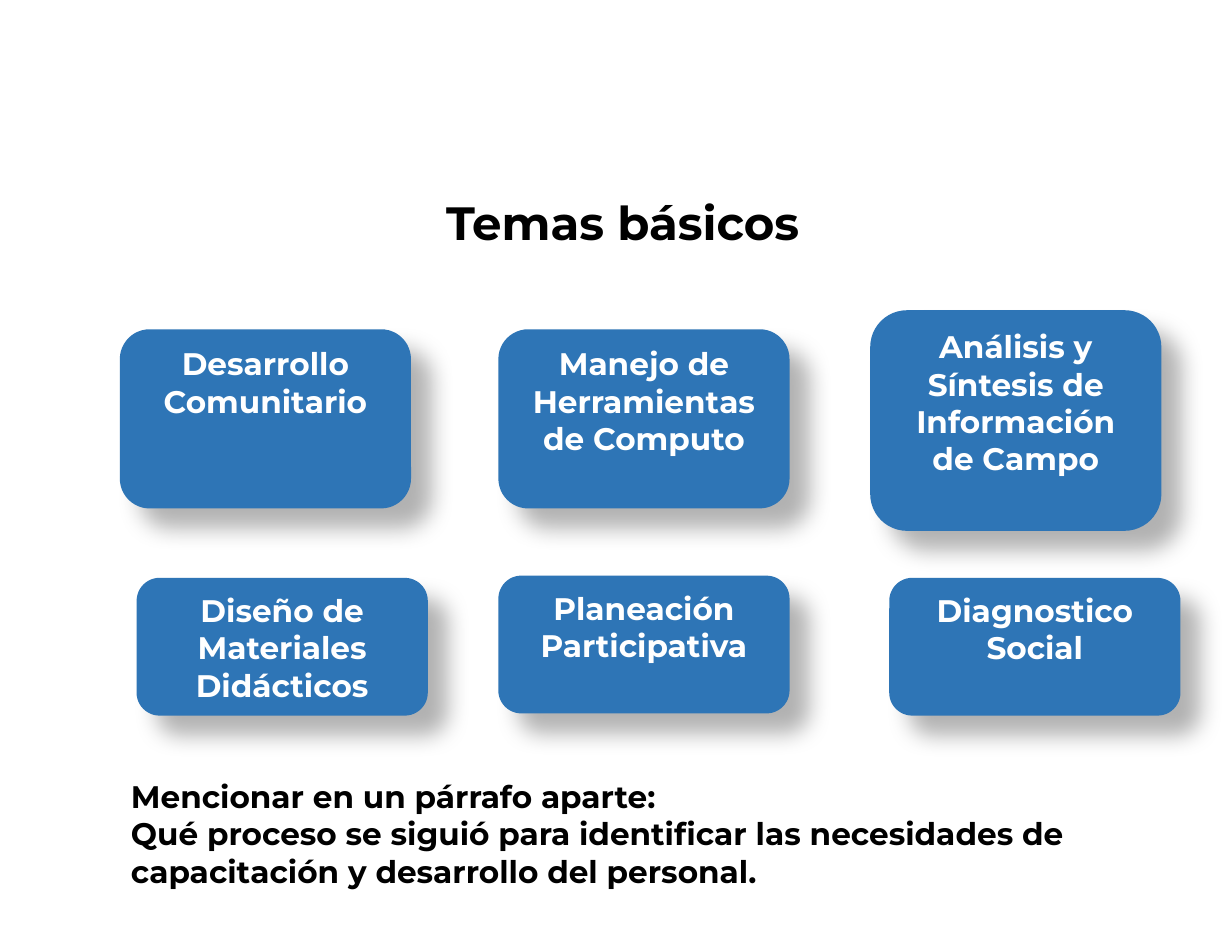
from lxml import etree
from pptx import Presentation
from pptx.dml.color import RGBColor
from pptx.enum.shapes import MSO_SHAPE
from pptx.enum.text import MSO_ANCHOR, PP_ALIGN
from pptx.oxml.ns import qn
from pptx.util import Inches, Pt

ROUNDED = MSO_SHAPE.ROUNDED_RECTANGLE
TOP = MSO_ANCHOR.TOP
LEFT, CENTER = PP_ALIGN.LEFT, PP_ALIGN.CENTER

COLORS = {"text": "000000", "card": "2E75B6", "card_text": "FFFFFF", "shadow": "000000"}
FONT = "Montserrat"
CARD_WIDTH = 2.6
TEXT_WIDTH = 9.62
TEXT_INSET = 0.57
CARD_INSET = 0.06

TITLE = ["Temas básicos"]
NOTE = [
    "Mencionar en un párrafo aparte:",
    "Qué proceso se siguió para identificar las necesidades de capacitación y desarrollo del personal.",
]
TOPICS = [
    ("Desarrollo Comunitario", 1.07, 2.94, 1.6),
    ("Manejo de Herramientas de Computo", 4.45, 2.94, 1.6),
    ("Análisis y Síntesis de Información de Campo", 7.77, 2.77, 1.97),
    ("Diseño de Materiales Didácticos", 1.22, 5.16, 1.23),
    ("Planeación Participativa", 4.45, 5.14, 1.23),
    ("Diagnostico Social", 7.94, 5.16, 1.23),
]


def write(shape, lines, size, color, align, inset):
    tf = shape.text_frame
    frame = {"word_wrap": True, "vertical_anchor": TOP, "margin_top": Inches(inset)}
    for name, value in frame.items():
        setattr(tf, name, value)
    for i, line in enumerate(lines):
        p = tf.paragraphs[0] if i == 0 else tf.add_paragraph()
        p.alignment = align
        r = p.add_run()
        r.text = line
        for name, value in {"name": FONT, "size": Pt(size), "bold": True}.items():
            setattr(r.font, name, value)
        r.font.color.rgb = RGBColor.from_string(COLORS[color])


def add_shadow(shape):
    shape.shadow.inherit = False
    effects = shape._element.spPr.find(qn("a:effectLst"))
    shadow = etree.SubElement(
        effects, qn("a:outerShdw"), blurRad=str(Pt(15)), dist=str(Pt(18)),
        dir=str(45 * 60000), algn="tl", rotWithShape="0",
    )
    color = etree.SubElement(shadow, qn("a:srgbClr"), val=COLORS["shadow"])
    etree.SubElement(color, qn("a:alpha"), val="30000")


def add_card(s, topic, left, top, height):
    box = [Inches(v) for v in (left, top, CARD_WIDTH, height)]
    sp = s.shapes.add_shape(ROUNDED, *box)
    sp.fill.solid()
    sp.fill.fore_color.rgb = RGBColor.from_string(COLORS["card"])
    sp.line.fill.background()
    add_shadow(sp)
    write(sp, [topic], 20, "card_text", CENTER, CARD_INSET)


def add_text(s, lines, left, top, height, size, align):
    box = [Inches(v) for v in (left, top, TEXT_WIDTH, height)]
    write(s.shapes.add_textbox(*box), lines, size, "text", align, TEXT_INSET)


def main():
    prs = Presentation()
    prs.slide_width, prs.slide_height = Inches(11), Inches(8.5)
    s = prs.slides.add_slide(prs.slide_layouts[6])
    add_text(s, TITLE, 0.75, 1.16, 1.36, 30, CENTER)
    for topic in TOPICS:
        add_card(s, *topic)
    add_text(s, NOTE, 1.07, 6.37, 1.87, 20, LEFT)
    prs.save("out.pptx")


if __name__ == "__main__":
    main()
